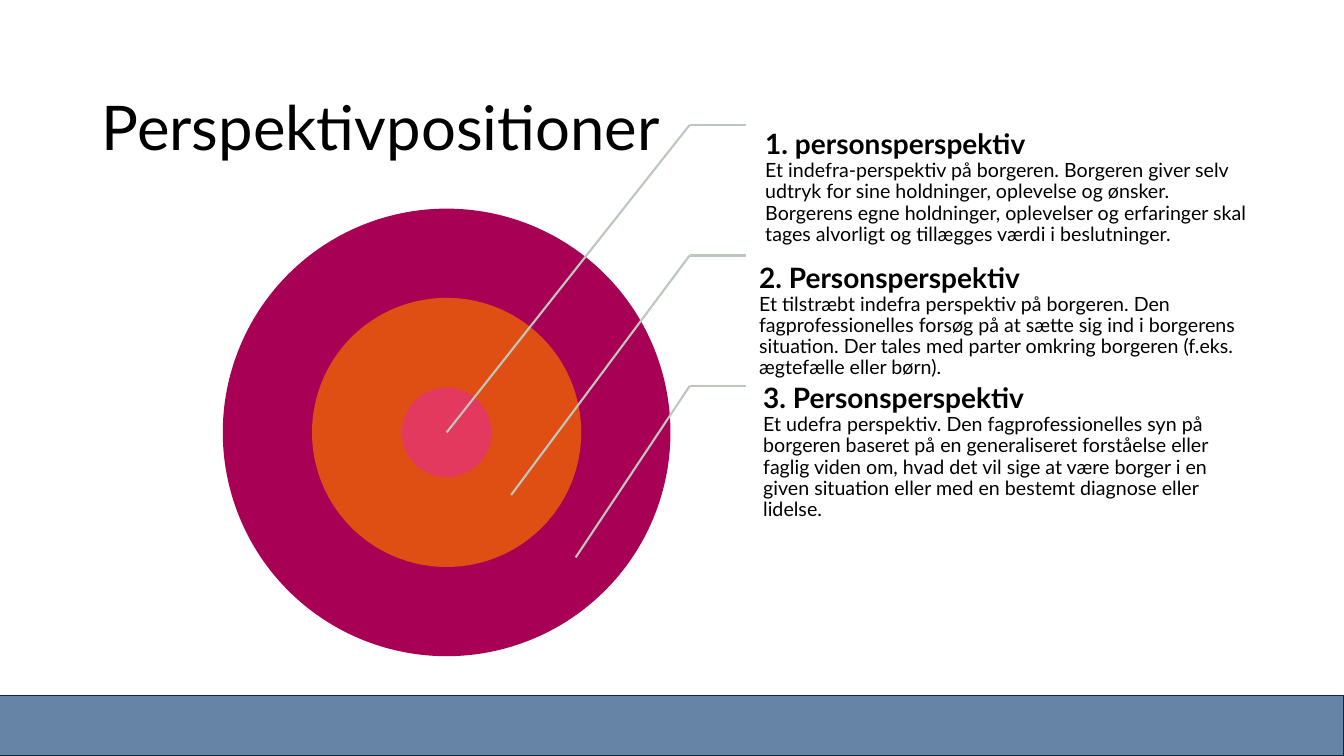
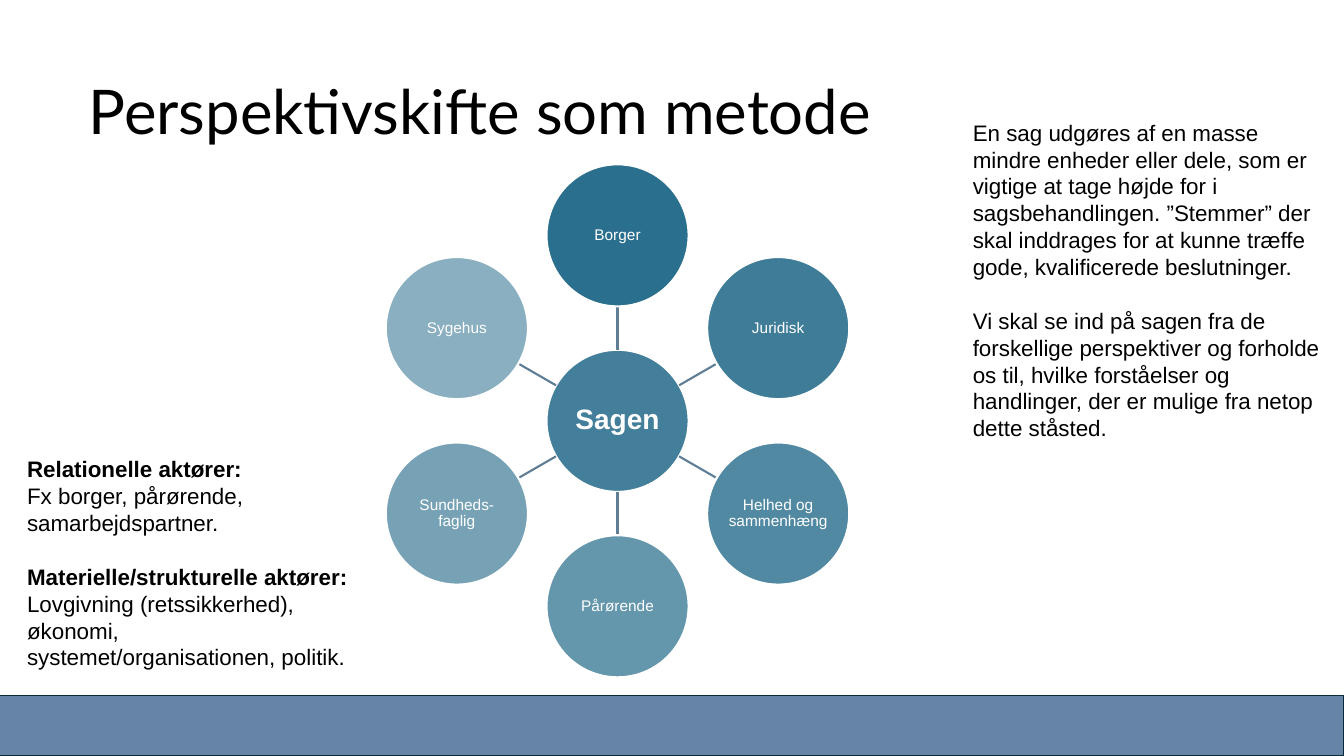
from math import cos, radians, sin

from lxml.etree import SubElement
from pptx import Presentation
from pptx.dml.color import RGBColor
from pptx.enum.shapes import MSO_CONNECTOR, MSO_SHAPE
from pptx.enum.text import MSO_ANCHOR, MSO_AUTO_SIZE, PP_ALIGN
from pptx.oxml.ns import qn
from pptx.util import Pt

EMU_PER_PX = 9144  # 100 px to the inch
SLIDE_WIDTH, SLIDE_HEIGHT = 1333, 750
TITLE_FONT, BODY_FONT = "Lato", "Arial"
COLORS = {
    "text": "000000",
    "white": "FFFFFF",
    "band": "6685A6",
    "band_line": "092A39",
    "outer": "A80055",
    "middle": "DF4F13",
    "inner": "E4395E",
    "pointer": "BDC7BE",
    "node": "156082",
    "spoke": "5F7D95",
}

PERSPECTIVES = [
    ((743, 124, 501, 125), "1. personsperspektiv",
     "Et indefra-perspektiv på borgeren. Borgeren giver selv udtryk for sine holdninger, "
     "oplevelse og ønsker. Borgerens egne holdninger, oplevelser og erfaringer skal tages "
     "alvorligt og tillægges værdi i beslutninger."),
    ((737, 254, 523, 130), "2. Personsperspektiv",
     "Et tilstræbt indefra perspektiv på borgeren. Den fagprofessionelles forsøg på at sætte "
     "sig ind i borgerens situation. Der tales med parter omkring borgeren (f.eks. ægtefælle "
     "eller børn)."),
    ((741, 384, 497, 130), "3. Personsperspektiv",
     "Et udefra perspektiv. Den fagprofessionelles syn på borgeren baseret på en generaliseret "
     "forståelse eller faglig viden om, hvad det vil sige at være borger i en given situation "
     "eller med en bestemt diagnose eller lidelse."),
]
VOICES = ["Borger", "Juridisk", "Helhed og sammenhæng", "Pårørende", "Sundheds-faglig", "Sygehus"]
# Each paragraph: text, bold, starts a new group
ACTORS = [
    ("Relationelle aktører:", True, False),
    ("Fx borger, pårørende, samarbejdspartner.", False, False),
    ("Materielle/strukturelle aktører:", True, True),
    ("Lovgivning (retssikkerhed), økonomi, systemet/organisationen, politik.", False, False),
]
EXPLANATION = [
    ("En sag udgøres af en masse mindre enheder eller dele, som er vigtige at tage højde for i "
     "sagsbehandlingen. ”Stemmer” der skal inddrages for at kunne træffe gode, kvalificerede "
     "beslutninger.", False, False),
    ("Vi skal se ind på sagen fra de forskellige perspektiver og forholde os til, hvilke "
     "forståelser og handlinger, der er mulige fra netop dette ståsted.", False, True),
]


def px(value):
    return round(value * EMU_PER_PX)


def color(name):
    return RGBColor.from_string(COLORS[name])


def add_run(paragraph, text, size, font_name, color_name="text", bold=False):
    run = paragraph.add_run()
    run.text = text
    run.font.size = Pt(size)
    run.font.name = font_name
    run.font.bold = bold
    run.font.color.rgb = color(color_name)


def set_margins(frame, left, other):
    frame.margin_left = px(left)
    frame.margin_top = frame.margin_right = frame.margin_bottom = px(other)


def add_title(slide, text, box):
    title = slide.shapes.title
    title.left, title.top, title.width, title.height = map(px, box)
    frame = title.text_frame
    frame.auto_size = MSO_AUTO_SIZE.NONE
    frame.vertical_anchor = MSO_ANCHOR.MIDDLE
    paragraph = frame.paragraphs[0]
    paragraph.alignment = PP_ALIGN.LEFT
    paragraph.line_spacing = 0.9
    add_run(paragraph, text, 44, TITLE_FONT)


def add_filled_shape(slide, kind, box, fill_name, line_name=None, line_width=0):
    shape = slide.shapes.add_shape(kind, *map(px, box))
    shape.shadow.inherit = False
    shape.fill.solid()
    shape.fill.fore_color.rgb = color(fill_name)
    if line_name:
        shape.line.color.rgb = color(line_name)
        shape.line.width = Pt(line_width)
    else:
        shape.line.fill.background()
    return shape


def add_circle(slide, center_x, center_y, diameter, fill_name, **line):
    box = (center_x - diameter / 2, center_y - diameter / 2, diameter, diameter)
    return add_filled_shape(slide, MSO_SHAPE.OVAL, box, fill_name, **line)


def add_line(slide, start, end, color_name):
    connector = slide.shapes.add_connector(MSO_CONNECTOR.STRAIGHT, *map(px, start + end))
    connector.line.color.rgb = color(color_name)
    connector.line.width = Pt(1.5)
    SubElement(connector.element.spPr, qn("a:effectLst"))


def add_node(slide, center_x, center_y, text, opacity, size=11, bold=False):
    circle = add_circle(slide, center_x, center_y, 141, "node", line_name="white", line_width=1.5)
    fill_color = circle.element.spPr.find(qn("a:solidFill"))[0]
    SubElement(fill_color, qn("a:alpha"), val=str(opacity * 1000))
    frame = circle.text_frame
    frame.word_wrap = True
    frame.vertical_anchor = MSO_ANCHOR.MIDDLE
    set_margins(frame, 0, 0)  # the longest word needs the full width
    paragraph = frame.paragraphs[0]
    paragraph.alignment = PP_ALIGN.CENTER
    paragraph.line_spacing = 0.9
    add_run(paragraph, text, size, BODY_FONT, "white", bold)


def add_text_frame(slide, box):
    frame = slide.shapes.add_textbox(*map(px, box)).text_frame
    frame.word_wrap = True
    return frame


def add_caption(slide, box, heading, body):
    frame = add_text_frame(slide, box)
    frame.vertical_anchor = MSO_ANCHOR.MIDDLE
    set_margins(frame, 16, 3)
    paragraph = frame.paragraphs[0]
    paragraph.line_spacing = 0.9
    add_run(paragraph, heading, 20, TITLE_FONT, bold=True)
    paragraph.add_line_break()
    add_run(paragraph, body, 14, TITLE_FONT)


def add_note(slide, box, items):
    frame = add_text_frame(slide, box)
    line_height = Pt(19.2)
    for index, (text, bold, new_group) in enumerate(items):
        paragraph = frame.add_paragraph() if index else frame.paragraphs[0]
        paragraph.line_spacing = line_height
        if new_group:
            paragraph.space_before = line_height
        add_run(paragraph, text, 16, BODY_FONT, bold=bold)


def add_master_band(presentation, slide):
    """Draw the bottom band, then move it to the master so every slide shows it."""
    band = add_filled_shape(slide, MSO_SHAPE.RECTANGLE, (0, 690, SLIDE_WIDTH, 60),
                            "band", "band_line")
    presentation.slide_master.shapes.element.insert(2, band.element)


def build_positions(slide):
    add_title(slide, "Perspektivpositioner", (91, 82, 1010, 94))
    # Target rings
    center_x, center_y = 443, 429
    for name, diameter in (("outer", 444), ("middle", 267), ("inner", 89)):
        add_circle(slide, center_x, center_y, diameter, name)
    # Captions with bent pointers, one per ring
    for index, (box, heading, body) in enumerate(PERSPECTIVES):
        add_caption(slide, box, heading, body)
        bend = (684, 124 + 129.5 * index)
        add_line(slide, bend, (740, bend[1]), "pointer")
        add_line(slide, bend, (center_x + 64 * index, center_y + 62 * index), "pointer")


def build_method(slide):
    add_title(slide, "Perspektivskifte som metode", (78, 41, 1112, 145))
    # Hub with voices around it
    center_x, center_y = 612.5, 417.5

    def around(angle, radius):
        return center_x + radius * cos(angle), center_y + radius * sin(angle)

    add_node(slide, center_x, center_y, "Sagen", 80, size=20, bold=True)
    for index, voice in enumerate(VOICES):
        angle = radians(360 / len(VOICES) * index - 90)
        add_line(slide, around(angle, 70.5), around(angle, 113.5), "spoke")
        add_node(slide, *around(angle, 184), voice, 90 - 8 * index)
    # Side notes
    add_note(slide, (17, 447, 361, 226), ACTORS)
    add_note(slide, (955, 113, 365, 333), EXPLANATION)


def main():
    presentation = Presentation()
    presentation.slide_width = px(SLIDE_WIDTH)
    presentation.slide_height = px(SLIDE_HEIGHT)
    title_only = presentation.slide_layouts[5]
    slides = [presentation.slides.add_slide(title_only) for _ in range(2)]
    add_master_band(presentation, slides[0])
    build_positions(slides[0])
    build_method(slides[1])
    presentation.save("out.pptx")


if __name__ == "__main__":
    main()
